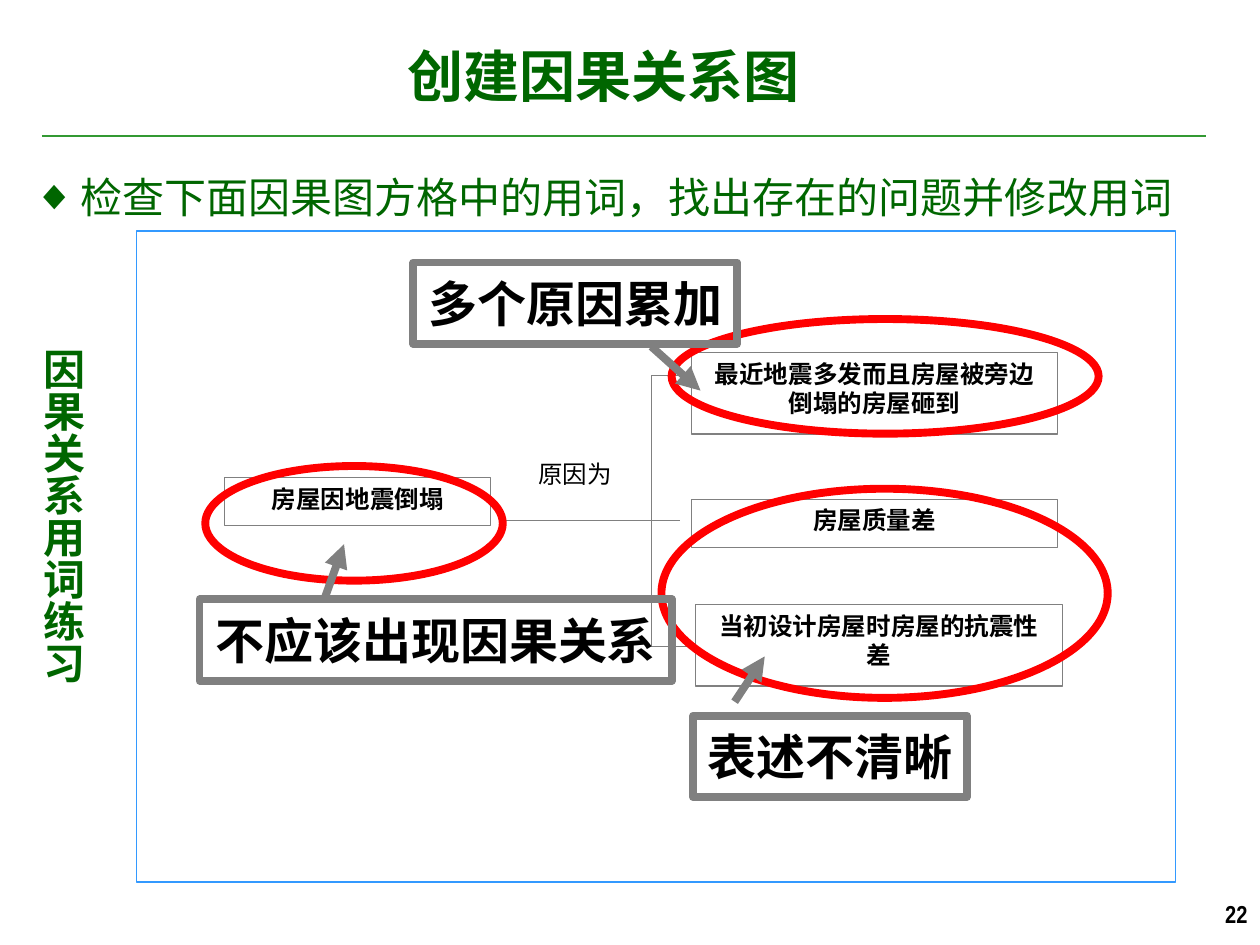
from dataclasses import dataclass

import pptx
import pptx.dml.color
import pptx.enum.shapes
import pptx.enum.text
import pptx.oxml.ns
import pptx.util
from lxml import etree

Pt = pptx.util.Pt
RGBColor = pptx.dml.color.RGBColor
Align = pptx.enum.text.PP_ALIGN
Anchor = pptx.enum.text.MSO_ANCHOR
AutoSize = pptx.enum.text.MSO_AUTO_SIZE
ShapeType = pptx.enum.shapes.MSO_SHAPE
qn = pptx.oxml.ns.qn

GREEN = RGBColor(0x00, 0x66, 0x00)
RULE_GREEN = RGBColor(0x33, 0x99, 0x33)
BLUE = RGBColor(0x33, 0x99, 0xFF)
GRAY = RGBColor(0x80, 0x80, 0x80)
RED = RGBColor(0xFF, 0x00, 0x00)
BLACK = RGBColor(0x00, 0x00, 0x00)
WHITE = RGBColor(0xFF, 0xFF, 0xFF)

MONO = "DejaVu Sans Mono"
THIN = 0.75
THICK = 4.5


@dataclass(frozen=True)
class Area:
    left: float
    top: float
    width: float
    height: float

    def points(self) -> list:
        return [Pt(self.left), Pt(self.top), Pt(self.width), Pt(self.height)]


@dataclass(frozen=True)
class Style:
    size: float
    color: RGBColor = BLACK
    bold: bool = True
    font: str = MONO
    align: Align = Align.CENTER
    anchor: Anchor = Anchor.TOP
    wrap: bool = True
    grow: bool = False


@dataclass(frozen=True)
class Label:
    text: str
    area: Area


@dataclass(frozen=True)
class Line:
    start: tuple[float, float]
    end: tuple[float, float]


TITLE = Style(32, GREEN, font="Noto Sans CJK SC", anchor=Anchor.MIDDLE)
BULLET = Style(24, GREEN, bold=False, align=Align.LEFT)
SIDE = Style(24, GREEN, wrap=False, grow=True)
NUMBER = Style(14, font="Arial Narrow", align=Align.RIGHT)
CAUSE = Style(14, grow=True)
RELATION = Style(14, bold=False, grow=True)
CALLOUT = Style(28, font="Arial", anchor=Anchor.MIDDLE, wrap=False, grow=True)

FRAME = Area(77.8, 132, 594, 372)

CAUSES = [
    Label("房屋因地震倒塌", Area(128.5, 273, 152, 27.5)),
    Label("最近地震多发而且房屋被旁边倒塌的房屋砸到", Area(395, 201.5, 209.5, 46.5)),
    Label("房屋质量差", Area(395, 285.3, 209.5, 27.5)),
    Label("当初设计房屋时房屋的抗震性差", Area(397.5, 345.5, 209.5, 46.5)),
]

# The bracket: a trunk with one branch at each end, crossed by the stem
TRUNK_X, BRANCH_X, TRUNK_TOP, TRUNK_BOTTOM = 372.2, 393.8, 214.5, 369.3
BRACKET = [
    Line((287.3, 297.3), (388.8, 297.3)),
    Line((TRUNK_X, TRUNK_TOP), (BRANCH_X, TRUNK_TOP)),
    Line((TRUNK_X, TRUNK_BOTTOM), (BRANCH_X, TRUNK_BOTTOM)),
    Line((TRUNK_X, TRUNK_TOP), (TRUNK_X, TRUNK_BOTTOM)),
]

RINGS = [
    Area(383.8, 182.3, 244, 65.5),
    Area(117.3, 266.3, 170, 65.5),
    Area(378, 279.3, 255, 119.5),
]

ARROWS = [
    Line((372.2, 198), (400.3, 223.2)),
    Line((185, 343.4), (196.6, 311)),
    Line((419.8, 401), (437, 375.1)),
]

CALLOUTS = [
    Label("多个原因累加", Area(236.2, 150, 185, 46.5)),
    Label("不应该出现因果关系", Area(114, 342.5, 270, 46.5)),
    Label("表述不清晰", Area(396, 409, 156.5, 46.5)),
]


def write(shape, text: str, style: Style):
    frame = shape.text_frame
    frame.word_wrap = style.wrap
    frame.auto_size = AutoSize.SHAPE_TO_FIT_TEXT if style.grow else AutoSize.NONE
    frame.vertical_anchor = style.anchor
    paragraph = frame.paragraphs[0]
    paragraph.alignment = style.align
    run = paragraph.add_run()
    run.text = text
    run.font.size = Pt(style.size)
    run.font.bold = style.bold
    run.font.name = style.font
    run.font.color.rgb = style.color
    east_asian = etree.SubElement(run.font._element, qn("a:ea"))
    east_asian.set("typeface", style.font)
    return paragraph


def add_text(slide, label: Label, style: Style):
    shape = slide.shapes.add_textbox(*label.area.points())
    write(shape, label.text, style)
    return shape


def add_outline(slide, kind: ShapeType, area: Area, color: RGBColor, weight: float):
    shape = slide.shapes.add_shape(kind, *area.points())
    shape.shadow.inherit = False
    shape.fill.background()
    shape.line.color.rgb = color
    shape.line.width = Pt(weight)
    return shape


def add_box(slide, label: Label, style: Style, weight: float) -> None:
    shape = add_outline(slide, ShapeType.RECTANGLE, label.area, GRAY, weight)
    write(shape, label.text, style)


def add_line(slide, line: Line, color: RGBColor, weight: float, arrow: bool = False) -> None:
    ends = [Pt(value) for value in line.start + line.end]
    connector = slide.shapes.add_connector(pptx.enum.shapes.MSO_CONNECTOR.STRAIGHT, *ends)
    connector.line.color.rgb = color
    connector.line.width = Pt(weight)
    if arrow:
        etree.SubElement(connector.get_or_add_ln(), qn("a:tailEnd")).set("type", "triangle")
    etree.SubElement(connector.element.spPr, qn("a:effectLst"))


def add_bullet(paragraph, character: str, indent: float) -> None:
    properties = paragraph._p.get_or_add_pPr()
    properties.set("marL", str(Pt(indent)))
    properties.set("indent", str(-Pt(indent)))
    etree.SubElement(properties, qn("a:buFont")).set("typeface", "Arial")
    etree.SubElement(properties, qn("a:buChar")).set("char", character)


def main() -> None:
    presentation = pptx.Presentation()
    presentation.slide_width, presentation.slide_height = Pt(720), Pt(540)
    slide = presentation.slides.add_slide(presentation.slide_layouts[6])

    # Heading, rule, page number, task and vertical side title
    add_line(slide, Line((24, 77.8), (689, 77.8)), RULE_GREEN, 1.5)
    add_text(slide, Label("22", Area(552, 510, 168, 30)), NUMBER)
    task = Label("检查下面因果图方格中的用词，找出存在的问题并修改用词", Area(12, 94.5, 690, 85.5))
    add_bullet(add_text(slide, task, BULLET).text_frame.paragraphs[0], "◆", 27)
    side = add_text(slide, Label("因果关系用词练习", Area(10, 192, 44, 186)), SIDE)
    side.element.txBody.bodyPr.set("vert", "eaVert")
    add_text(slide, Label("创建因果关系图", Area(122, 15, 446, 55.5)), TITLE)

    # Cause-and-effect diagram
    frame = add_outline(slide, ShapeType.RECTANGLE, FRAME, BLUE, THIN)
    frame.fill.solid()
    frame.fill.fore_color.rgb = WHITE
    for cause in CAUSES:
        add_box(slide, cause, CAUSE, THIN)
    for line in BRACKET:
        add_line(slide, line, GRAY, THIN)
    add_text(slide, Label("原因为", Area(281.5, 259, 94.5, 27.5)), RELATION)

    # Marked problems with their comments
    for ring in RINGS:
        add_outline(slide, ShapeType.OVAL, ring, RED, THICK)
    for arrow, callout in zip(ARROWS, CALLOUTS):
        add_line(slide, arrow, GRAY, THICK, arrow=True)
        add_box(slide, callout, CALLOUT, THICK)

    presentation.save("out.pptx")


if __name__ == "__main__":
    main()
